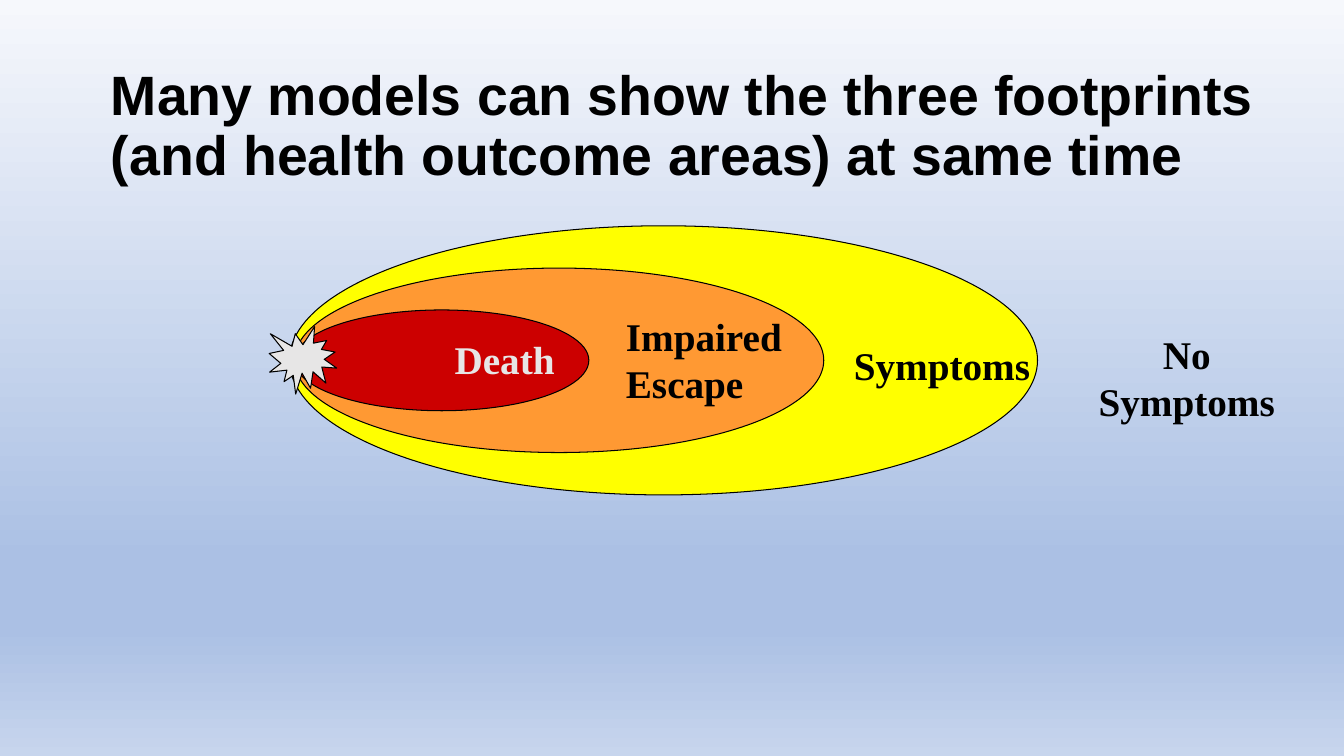
from copy import deepcopy

from pptx import Presentation, util as u
from pptx.dml.color import RGBColor
from pptx.enum import shapes, text

WIDTH, HEIGHT = 13.33, 7.5
BLACK = RGBColor(0x00, 0x00, 0x00)
PALE = RGBColor(0xE7, 0xE6, 0xE6)
YELLOW = RGBColor(0xFF, 0xFF, 0x00)
ORANGE = RGBColor(0xFF, 0x99, 0x33)
RED = RGBColor(0xCC, 0x00, 0x00)
SKY = [
    (0, RGBColor(0xF6, 0xF8, 0xFC)),
    (74, RGBColor(0xAB, 0xC0, 0xE4)),
    (83, RGBColor(0xAB, 0xC0, 0xE4)),
    (100, RGBColor(0xC7, 0xD5, 0xED)),
]
OVAL = shapes.MSO_SHAPE.OVAL
BURST = shapes.MSO_SHAPE.EXPLOSION1
LEFT, CENTER = text.PP_ALIGN.LEFT, text.PP_ALIGN.CENTER


def paint_background(page):
    """Fill the page with a vertical gradient."""
    fill = page.background.fill
    fill.gradient()
    fill.gradient_angle = 270
    stop_list = fill._fill._gradFill.gsLst
    for extra in range(len(SKY) - len(stop_list)):
        stop_list.insert(1, deepcopy(stop_list[0]))
    for stop, (percent, color) in zip(fill.gradient_stops, SKY):
        stop.position = percent / 100
        stop.color.rgb = color


def write(para, words, font_name, size, color, align):
    """Add one bold run to a paragraph."""
    para.alignment = align
    span = para.add_run()
    span.text = words
    font = span.font
    font.name, font.size, font.bold = font_name, u.Pt(size), True
    font.color.rgb = color


def add_title(page, box, words):
    """Place the title placeholder in its box."""
    title = page.shapes.title
    title.left, title.top, title.width, title.height = map(u.Inches, box)
    frame = title.text_frame
    frame.word_wrap = True
    frame.auto_size = text.MSO_AUTO_SIZE.NONE
    frame.vertical_anchor = text.MSO_ANCHOR.MIDDLE
    para = frame.paragraphs[0]
    para.line_spacing = 0.9
    write(para, words, "Arial", 39.6, BLACK, LEFT)


def add_figure(page, kind, box, color):
    """Draw one filled shape with a thin black outline."""
    figure = page.shapes.add_shape(kind, *map(u.Inches, box))
    figure.shadow.inherit = False
    figure.fill.solid()
    figure.fill.fore_color.rgb = color
    figure.line.color.rgb = BLACK
    figure.line.width = u.Pt(0.75)


def add_label(page, box, words, color, align):
    """Write the name of one health outcome area."""
    label = page.shapes.add_textbox(*map(u.Inches, box))
    frame = label.text_frame
    frame.word_wrap = True
    write(frame.paragraphs[0], words, "Times New Roman", 28, color, align)


def add_footprints(page, box):
    """Draw the nested footprints, the release and the labels in the box."""
    left, top, width, height = box
    middle = top + height / 2
    for offset, oval_width, oval_height, color in [
        (0, width, height, YELLOW),
        (0.05, 5.25, 1.83, ORANGE),
        (0.05, 2.92, 1, RED),
    ]:
        oval = (left + offset, middle - oval_height / 2, oval_width, oval_height)
        add_figure(page, OVAL, oval, color)
    burst = 0.67
    add_figure(page, BURST, (left - 0.2, middle - burst / 2, burst, burst), PALE)
    for offset, drop, label_width, label_height, words, color, align in [
        (1.54, 1.04, 1.25, 0.57, "Death", PALE, LEFT),
        (3.24, 0.81, 2.06, 1.04, "Impaired Escape", BLACK, LEFT),
        (5.5, 1.1, 2.06, 0.57, "Symptoms", BLACK, LEFT),
        (7.87, 0.99, 2.06, 1.04, "No Symptoms", BLACK, CENTER),
    ]:
        area = (left + offset, top + drop, label_width, label_height)
        add_label(page, area, words, color, align)


def main():
    """Build and save the slide."""
    deck = Presentation()
    deck.slide_width, deck.slide_height = u.Inches(WIDTH), u.Inches(HEIGHT)
    page = deck.slides.add_slide(deck.slide_layouts[5])
    paint_background(page)
    add_title(
        page,
        (1, 0.64, 11.98, 1.25),
        "Many models can show the three footprints "
        "(and health outcome areas) at same time",
    )
    add_footprints(page, (2.87, 2.24, 7.42, 2.67))
    deck.save("out.pptx")


if __name__ == "__main__":
    main()
